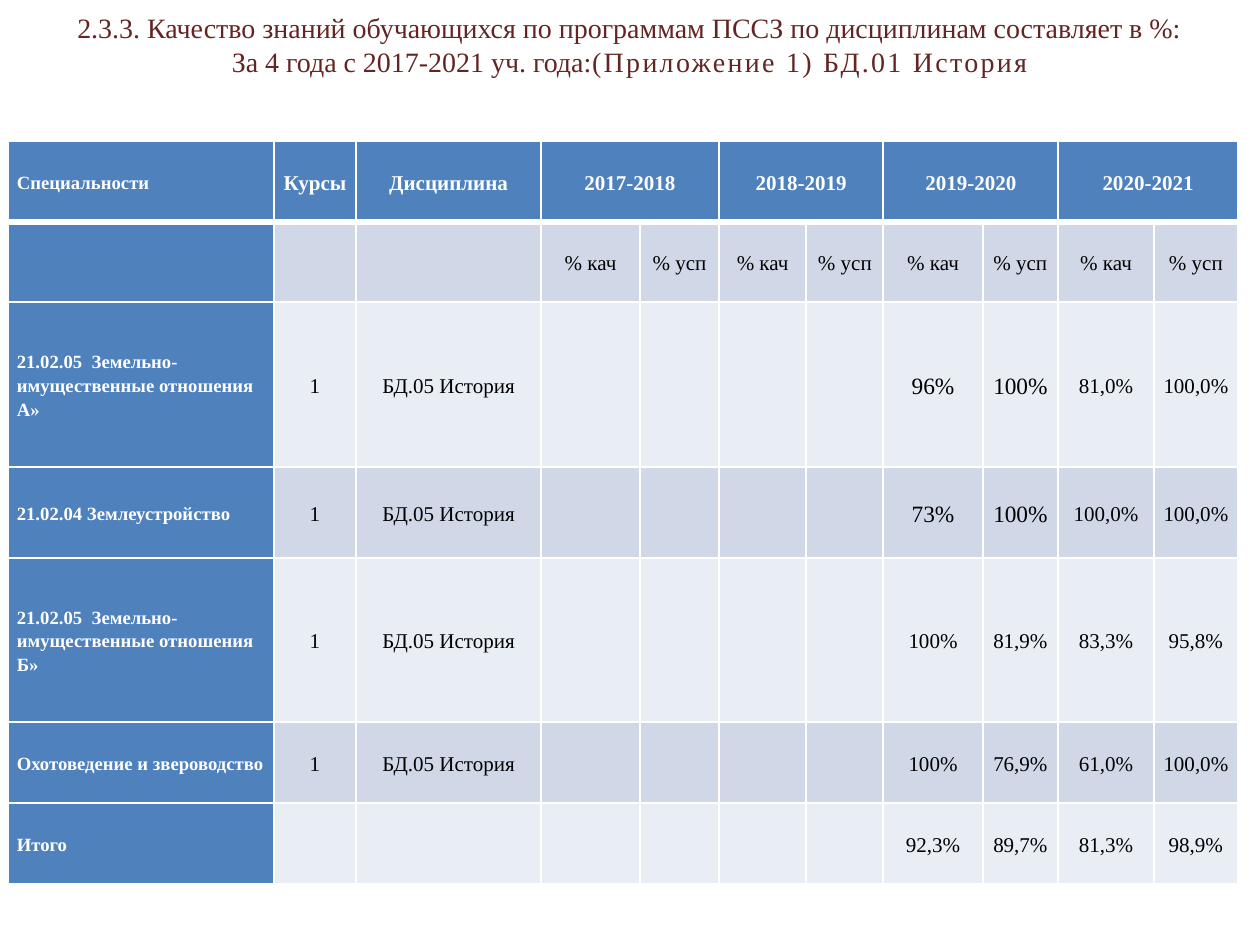
from pptx import Presentation, util as u
from pptx.dml.color import RGBColor
from pptx.enum import text
from pptx.oxml import parse_xml
from pptx.oxml.ns import nsdecls

FONT = "Times New Roman"
WHITE, BLACK, MAROON, BLUE = "FFFFFF", "000000", "632523", "4F81BD"
BANDS = ["D0D8E8", "E9EDF4"]
COLS = [1.58, 0.49, 1.1, 0.59, 0.47, 0.52, 0.46, 0.59, 0.45, 0.57, 0.5]
ROWS = [0.48, 0.48, 0.98, 0.54, 0.98, 0.48, 0.48]
YEARS = ["2017-2018", "2018-2019", "2019-2020", "2020-2021"]
SUBJECT = ["1", "БД.05 История"]
RESULTS = [
    ["21.02.05  Земельно-имущественные отношения А»", *SUBJECT, "96%", "100%", "81,0%", "100,0%"],
    ["21.02.04 Землеустройство", *SUBJECT, "73%", "100%", "100,0%", "100,0%"],
    ["21.02.05  Земельно-имущественные отношения Б»", *SUBJECT, "100%", "81,9%", "83,3%", "95,8%"],
    ["Охотоведение и звероводство", *SUBJECT, "100%", "76,9%", "61,0%", "100,0%"],
    ["Итого", "", "", "92,3%", "89,7%", "81,3%", "98,9%"],
]
LARGE = {(2, 7), (2, 8), (3, 7), (3, 8)}


def rgb(color):
    """Turn a hex string into a colour."""
    return RGBColor.from_string(color)


def set_font(p, size, color, bold=False):
    """Set the font of a whole paragraph."""
    p.font.name, p.font.size, p.font.bold = FONT, u.Pt(size), bold
    p.font.color.rgb = rgb(color)


def set_borders(cell, **widths):
    """Give a cell white borders of the given widths in points."""
    tcPr = cell._tc.get_or_add_tcPr()
    for i, side in enumerate("LRTB"):
        tcPr.insert(i, parse_xml(
            f'<a:ln{side} {nsdecls("a")} w="{u.Pt(widths.get(side, 1))}">'
            f'<a:solidFill><a:srgbClr val="{WHITE}"/></a:solidFill></a:ln{side}>'))


def fill_cell(cell, row, col, value):
    """Write one table cell in the style of its row and column."""
    heading = row == 0 or col == 0
    cell.fill.solid()
    cell.fill.fore_color.rgb = rgb(BLUE if heading else BANDS[(row - 1) % 2])
    set_borders(cell, T=3 if row == 1 else 1, B=3 if row == 0 else 1)
    cell.vertical_anchor = text.MSO_ANCHOR.MIDDLE
    cell.margin_left = cell.margin_right = u.Inches(0.05)
    cell.margin_top = cell.margin_bottom = 0
    p = cell.text_frame.paragraphs[0]
    p.text = value
    p.alignment = text.PP_ALIGN.CENTER if col else text.PP_ALIGN.LEFT
    p.line_spacing, p.space_after = 1.15, u.Pt(10)
    size = 8 if col == 0 else 10 if (row, col) in LARGE else 9
    set_font(p, size, WHITE if heading else BLACK, heading)


def add_title(s, left, top, width, height):
    """Add the two-line centred title."""
    tf = s.shapes.add_textbox(*map(u.Inches, (left, top, width, height))).text_frame
    tf.word_wrap = True
    tf.vertical_anchor = text.MSO_ANCHOR.MIDDLE
    p = tf.paragraphs[0]
    p.alignment = text.PP_ALIGN.CENTER
    p.add_run().text = "2.3.3. Качество знаний обучающихся по программам ПССЗ по дисциплинам составляет в %:"
    p.add_line_break()
    p.add_run().text = "За 4 года с 2017-2021 уч. года:"
    r = p.add_run()
    r.text = "(Приложение 1) БД.01 История"
    r.font._element.set("spc", "100")
    set_font(p, 12, MAROON)


def add_results(s, left, top):
    """Add the table of results by speciality and year."""
    table = s.shapes.add_table(
        len(ROWS), len(COLS), *map(u.Inches, (left, top, sum(COLS), sum(ROWS)))).table
    table.first_col = True
    for column, width in zip(table.columns, COLS):
        column.width = u.Inches(width)
    for row, height in zip(table.rows, ROWS):
        row.height = u.Inches(height)
    header = ["Специальности", "Курсы", "Дисциплина"]
    for year in YEARS:
        header += [year, ""]
    grid = [header, [""] * 3 + ["% кач", "% усп"] * len(YEARS)]
    grid += [r[:3] + [""] * 4 + r[3:] for r in RESULTS]
    for i, values in enumerate(grid):
        for j, value in enumerate(values):
            fill_cell(table.cell(i, j), i, j, value)
    for j in range(3, len(COLS), 2):
        table.cell(0, j).merge(table.cell(0, j + 1))


def main():
    """Build and save the slide."""
    prs = Presentation()
    prs.slide_width = u.Inches(7.5)
    prs.slide_height = prs.slide_width * 3 // 4
    s = prs.slides.add_slide(prs.slide_layouts[6])
    add_title(s, 0, 0, 7.5, 0.53)
    add_results(s, 0.05, 0.84)
    prs.save("out.pptx")


if __name__ == "__main__":
    main()
